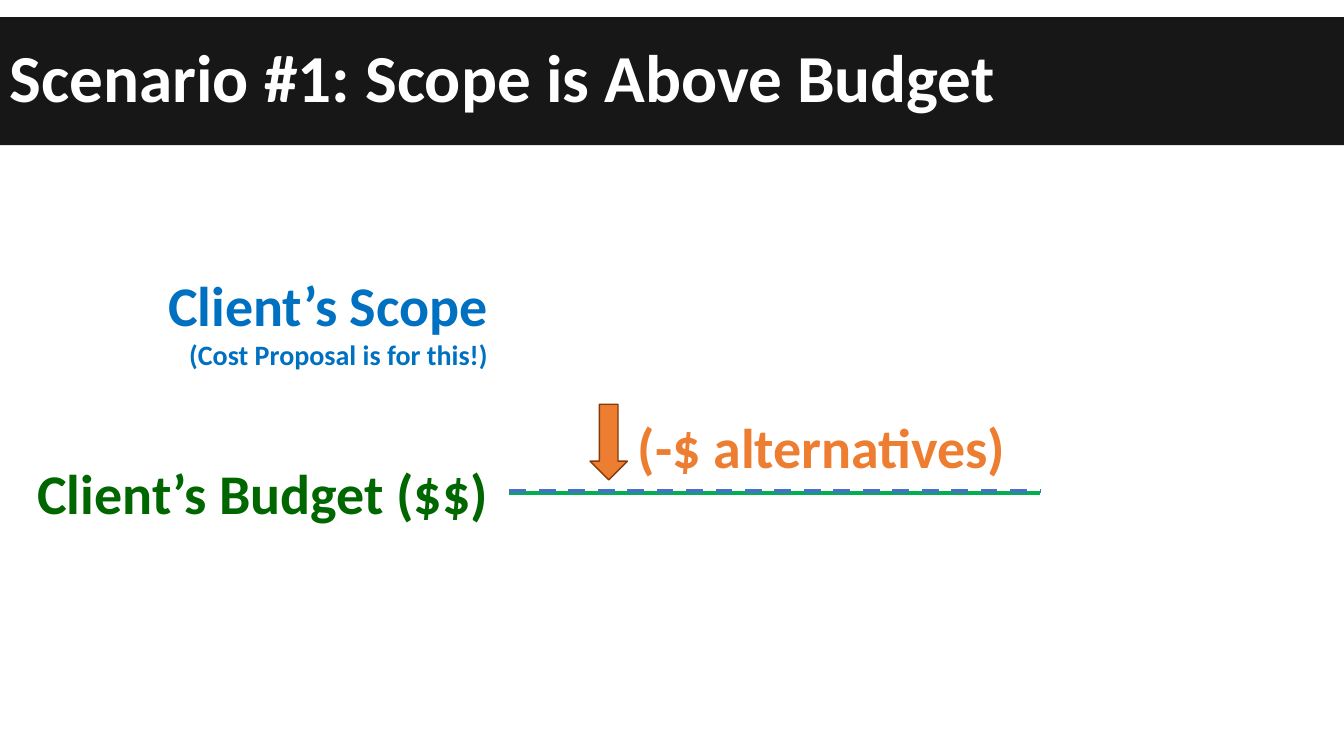
from lxml.etree import SubElement
from pptx import Presentation
from pptx.dml.color import RGBColor
from pptx.enum.dml import MSO_LINE
from pptx.enum.shapes import MSO_CONNECTOR, MSO_SHAPE
from pptx.enum.text import MSO_ANCHOR, MSO_AUTO_SIZE, PP_ALIGN
from pptx.oxml.ns import qn
from pptx.util import Inches, Pt

COLORS = {
    "bar": "181717", "white": "FFFFFF", "budget": "006600", "scope": "0070C0",
    "orange": "ED7D31", "brown": "843C0B", "green": "00B050", "blue": "4472C4",
}


class Deck:
    font = "Calibri"
    grid = 100

    def __init__(self):
        self.prs = Presentation()
        self.prs.slide_width = Inches(13.33)
        self.prs.slide_height = Inches(7.5)
        self.s = self.prs.slides.add_slide(self.prs.slide_layouts[6])

    def col(self, n):
        return int(self.prs.slide_width * n / self.grid)

    def row(self, n):
        return int(self.prs.slide_height * n / self.grid)

    def box(self, x, y, w, h):
        return self.col(x), self.row(y), self.col(w), self.row(h)

    def color(self, name):
        return RGBColor.from_string(COLORS[name])

    def set_text(self, tf, lines, color, align=PP_ALIGN.LEFT, spacing=None):
        for i, (text, size) in enumerate(lines):
            p = tf.add_paragraph() if i else tf.paragraphs[0]
            p.text = text
            p.alignment = align
            p.line_spacing = spacing
            p.font.name = self.font
            p.font.size = Pt(size)
            p.font.bold = True
            p.font.color.rgb = self.color(color)

    def shape(self, kind, x, y, w, h, fill, line=None):
        sp = self.s.shapes.add_shape(kind, *self.box(x, y, w, h))
        sp.shadow.inherit = False
        sp.fill.solid()
        sp.fill.fore_color.rgb = self.color(fill)
        if line:
            sp.line.color.rgb = self.color(line)
            sp.line.width = Pt(1)
        else:
            sp.line.fill.background()
        return sp

    def title(self, text):
        sp = self.shape(MSO_SHAPE.RECTANGLE, 0, 2.27, 100, 16.93, "bar")
        sp.text_frame.vertical_anchor = MSO_ANCHOR.MIDDLE
        self.set_text(sp.text_frame, [(text, 48)], "white", spacing=0.9)

    def label(self, x, y, w, h, lines, color, align=PP_ALIGN.LEFT):
        tf = self.s.shapes.add_textbox(*self.box(x, y, w, h)).text_frame
        tf.word_wrap = False
        tf.auto_size = MSO_AUTO_SIZE.SHAPE_TO_FIT_TEXT
        self.set_text(tf, lines, color, align)

    def level(self, x1, x2, y, color, dash=None):
        c = self.s.shapes.add_connector(
            MSO_CONNECTOR.STRAIGHT, self.col(x1), self.row(y), self.col(x2), self.row(y))
        c.line.color.rgb = self.color(color)
        c.line.width = Pt(3)
        if dash:
            c.line.dash_style = dash
        SubElement(c._element.spPr, qn("a:effectLst"))


def main():
    deck = Deck()
    right = 37.05
    deck.level(37.9, 77.35, 65.2, "green")
    deck.level(37.9, 77.35, 64.93, "blue", MSO_LINE.DASH)
    deck.title("Scenario #1: Scope is Above Budget")
    for y, w, h, color, lines in (
        (60, 35.4, 10.27, "budget", [("Client’s Budget ($$)", 40)]),
        (35.07, 26.18, 14.8, "scope",
         [("Client’s Scope", 40), ("(Cost Proposal is for this!)", 20)]),
    ):
        deck.label(right - w, y, w, h, lines, color, PP_ALIGN.RIGHT)
    deck.shape(MSO_SHAPE.DOWN_ARROW, 43.9, 53.47, 2.78, 10, "orange", "brown")
    deck.label(46.73, 53.87, 29.18, 10.27, [("(-$ alternatives)", 40)], "orange")
    deck.prs.save("out.pptx")


if __name__ == "__main__":
    main()
